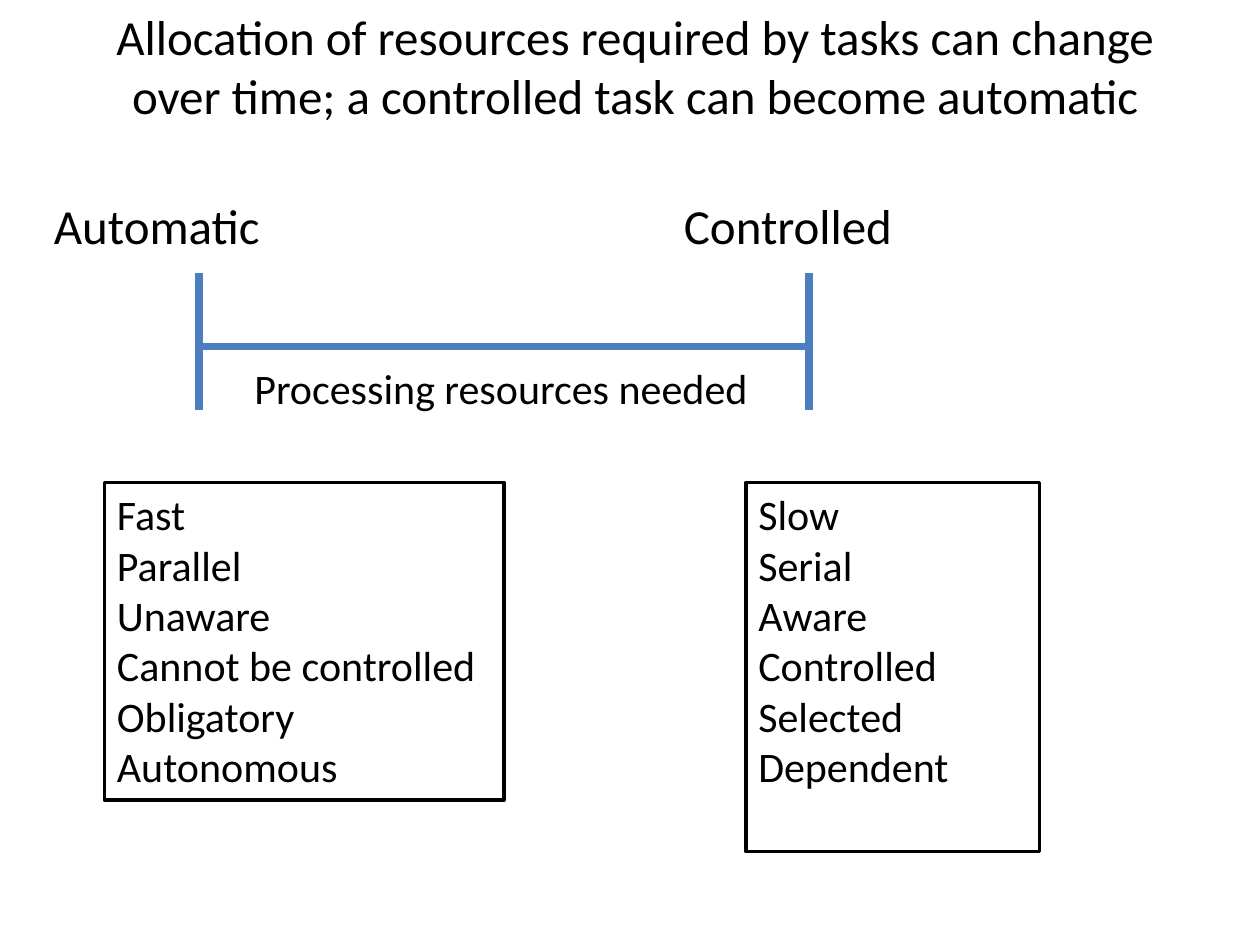
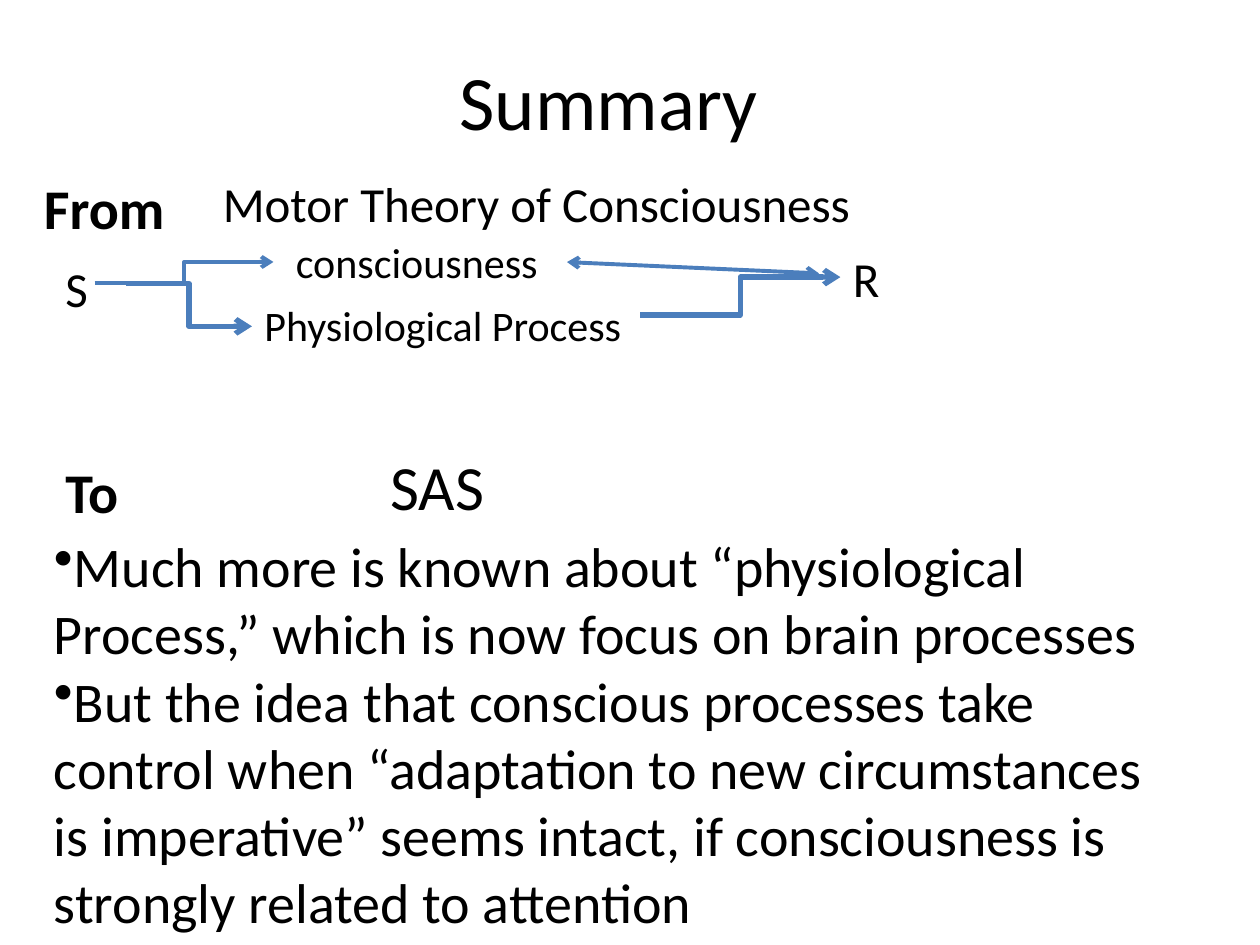
from dataclasses import dataclass
from lxml.etree import SubElement as Sub
from pptx import Presentation
from pptx.dml.color import RGBColor as Rgb
from pptx.enum.shapes import MSO_CONNECTOR as Conn, MSO_SHAPE as Form
from pptx.enum.text import MSO_ANCHOR as Anchor, MSO_AUTO_SIZE as Auto, PP_ALIGN as Align
from pptx.oxml.ns import qn
from pptx.util import Inches, Pt


@dataclass(frozen=True)
class Theme:
    font: str = "Calibri"
    ink: Rgb = Rgb(0x00, 0x00, 0x00)
    paper: Rgb = Rgb(0xFF, 0xFF, 0xFF)
    blue: Rgb = Rgb(0x4B, 0x7E, 0xBC)
    title: int = 44
    huge: int = 36
    big: int = 32
    mid: int = 28
    small: int = 24
    frame: float = 2
    scale: float = 4.5
    thick: float = 3
    thin: float = 2.25


T = Theme()

# Content of slide 1: a scale with two ends, and the traits of each end
HEAD = "Allocation of resources required by tasks can change over time; a controlled task can become automatic"
ENDS = [  # name, name box, scale x
    ("Automatic", (0.33, 1.5, 2.33, 0.57), 1.58),
    ("Controlled", (5.33, 1.5, 2.5, 0.57), 6.42),
]
TICK = (2.17, 3.25)
AXIS = 2.75
NEED = ("Processing resources needed", (1.92, 2.83, 4.25, 0.5))
TRAITS = [
    (["Fast", "Parallel", "Unaware", "Cannot be controlled", "Obligatory", "Autonomous"],
     (0.83, 3.83, 3.17, 2.52)),
    (["Slow", "Serial", "Aware", "Controlled", "Selected", "Dependent"],
     (5.92, 3.83, 2.33, 2.93)),
]

# Content of slide 2: labels, arrows and closing points
LABELS = [  # text, box, size, bold
    ("From", (0.25, 1.33, 2.25, 0.64), T.big, True),
    ("Motor Theory of Consciousness", (1.67, 1.33, 5.42, 0.57), T.mid, False),
    ("S", (0.42, 2, 4.33, 0.57), T.mid, False),
    ("consciousness", (2.25, 1.83, 2.17, 0.5), T.small, False),
    ("Physiological Process", (2, 2.33, 3.33, 0.5), T.small, False),
    ("R", (6.67, 1.92, 0.67, 0.57), T.mid, False),
    ("To", (0.42, 3.58, 1.08, 0.64), T.big, True),
    ("SAS", (3, 3.5, 1.08, 0.71), T.huge, False),
]
ARROWS = [  # from, to, kind, width, arrowheads
    ((0.75, 2.25), (2.17, 2.08), Conn.ELBOW, T.thin, ["tailEnd"]),
    ((1, 2.25), (2, 2.59), Conn.ELBOW, T.thick, ["tailEnd"]),
    ((5.08, 2.5), (6.67, 2.2), Conn.ELBOW, T.thick, ["tailEnd"]),
    ((4.5, 2.08), (6.5, 2.17), Conn.STRAIGHT, T.thin, ["headEnd", "tailEnd"]),
]
POINTS = [
    "Much more is known about “physiological Process,” which is now focus on brain processes",
    "But the idea that conscious processes take control when “adaptation to new circumstances "
    "is imperative” seems intact, if consciousness is strongly related to attention",
]
POINT_BOX = (0.33, 4.17, 9.17, 3.33)


# Shared helpers
def write(shape, lines, size, bold=False, align=Align.LEFT, anchor=Anchor.TOP, mark=None):
    frame = shape.text_frame
    frame.word_wrap = True
    frame.auto_size = Auto.NONE
    frame.vertical_anchor = anchor
    for i, line in enumerate(lines):
        para = frame.paragraphs[0] if i == 0 else frame.add_paragraph()
        para.alignment = align
        run = para.add_run()
        run.text = line
        font = run.font
        font.name, font.size, font.bold = T.font, Pt(size), bold
        font.color.rgb = T.ink
        if mark:
            Sub(para._p.get_or_add_pPr(), qn("a:buChar"), char=mark)


def label(slide, lines, box, size, **style):
    shape = slide.shapes.add_textbox(*map(Inches, box))
    write(shape, lines, size, **style)


def panel(slide, lines, box):
    shape = slide.shapes.add_shape(Form.RECTANGLE, *map(Inches, box))
    shape.shadow.inherit = False
    shape.fill.solid()
    shape.fill.fore_color.rgb = T.paper
    shape.line.color.rgb = T.ink
    shape.line.width = Pt(T.frame)
    write(shape, lines, T.small)


def link(slide, start, end, kind, width, heads=()):
    line = slide.shapes.add_connector(kind, *map(Inches, start + end))
    line.line.color.rgb = T.blue
    line.line.width = Pt(width)
    for head in heads:
        Sub(line.line._get_or_add_ln(), qn("a:" + head), type="arrow")
    Sub(line._element.spPr, qn("a:effectLst"))


def start(deck, text, box, size, anchor):
    slide = deck.slides.add_slide(deck.slide_layouts[5])
    title = slide.shapes.title
    title.left, title.top, title.width, title.height = map(Inches, box)
    write(title, [text], size, align=Align.CENTER, anchor=anchor)
    return slide


# Slides
def tasks(deck):
    slide = start(deck, HEAD, (0.5, 0, 9.08, 1.04), T.mid, Anchor.TOP)
    top, foot = TICK
    for name, box, x in ENDS:
        link(slide, (x, top), (x, foot), Conn.STRAIGHT, T.scale)
        label(slide, [name], box, T.mid)
    left, right = [x for _, _, x in ENDS]
    link(slide, (left, AXIS), (right, AXIS), Conn.STRAIGHT, T.scale)
    for lines, box in TRAITS:
        panel(slide, lines, box)
    text, box = NEED
    label(slide, [text], box, T.small)


def summary(deck):
    slide = start(deck, "Summary", (0.33, 0.25, 9, 1.08), T.title, Anchor.MIDDLE)
    for text, box, size, bold in LABELS:
        label(slide, [text], box, size, bold=bold)
    for arrow in ARROWS:
        link(slide, *arrow)
    label(slide, POINTS, POINT_BOX, T.big, mark="•")


def main():
    deck = Presentation()
    deck.slide_width, deck.slide_height = Inches(10), Inches(7.5)
    tasks(deck)
    summary(deck)
    deck.save("out.pptx")


if __name__ == "__main__":
    main()
